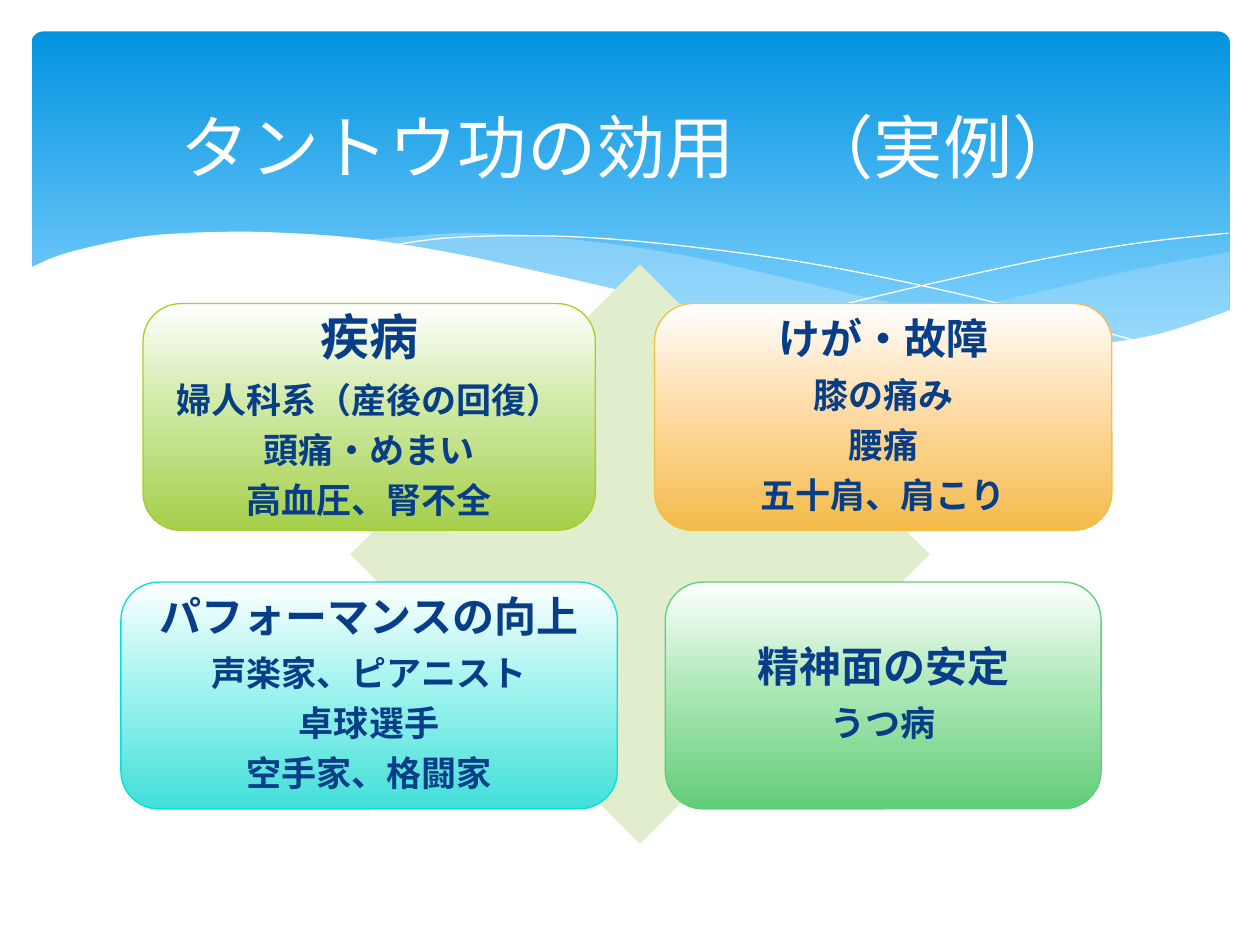
from lxml import etree
from pptx import Presentation
from pptx import util as u
from pptx.dml.color import RGBColor
from pptx.enum import shapes, text
from pptx.oxml.ns import qn

FONT = "Noto Sans CJK JP"
NAVY, WHITE, PALE_BLUE = "073E87", "FFFFFF", "C6E7FC"
COLUMN_CENTRES = (2.93, 7.01)
ROW_TOPS = (2.41, 4.62)
CARD_HEIGHT = 1.8

# column, row, width, middle colour, end colour, line colour, heading size, inset, lines
CARDS = [
    (0, 0, 3.59, "D1EAA7", "A4CF4A", "A5D028", 28, 0.12,
     ["疾病", "婦人科系（産後の回復）", "頭痛・めまい", "高血圧、腎不全"]),
    (1, 0, 3.63, "FFDDAA", "F4BB4A", "F5C040", 24, 0.1,
     ["けが・故障", "膝の痛み", "腰痛", "五十肩、肩こり"]),
    (0, 1, 3.94, "A5F4F0", "42DFD9", "05E0DB", 24, 0.1,
     ["パフォーマンスの向上", "声楽家、ピアニスト", "卓球選手", "空手家、格闘家"]),
    (1, 1, 3.46, "B1E9BB", "61CD78", "5BD078", 24, 0.1,
     ["精神面の安定", "うつ病"]),
]

# Key points of the wave edges, in inches
RIGHT_CREST = [(9.76, 2), (9.06, 2.13), (8.32, 2.3), (7.53, 2.48), (6.61, 2.65)]
RIGHT_TROUGH = [(6.61, 2.65), (7.19, 2.72), (7.81, 2.77), (8.44, 2.77),
                (9.05, 2.69), (9.42, 2.59), (9.76, 2.47)]
MIDDLE_CREST = [(8.93, 2.73), (8.07, 2.6), (7.06, 2.4), (6.29, 2.22), (5.55, 2.05),
                (4.89, 1.94), (4.2, 1.87), (3.61, 1.85), (2.86, 1.91)]
MIDDLE_TROUGH = [(2.86, 1.91), (3.62, 2.03), (4.49, 2.22), (5.3, 2.4), (6.18, 2.58),
                 (6.95, 2.7), (7.61, 2.77), (8.28, 2.78), (8.93, 2.73)]
FALLING_LINE = [(3.09, 1.95), (3.53, 1.89), (4.16, 1.87), (4.89, 1.9), (5.82, 2),
                (6.65, 2.13), (7.6, 2.33), (8.31, 2.51), (9.07, 2.72)]
RISING_LINE = [(6.13, 2.57), (6.72, 2.41), (7.48, 2.23), (8.36, 2.04), (9.1, 1.92),
               (9.75, 1.85)]
WHITE_CREST = [(9.77, 2.46), (9.2, 2.65), (8.63, 2.74), (8.09, 2.77), (7.44, 2.74),
               (6.68, 2.65), (5.79, 2.5), (4.47, 2.2), (3.65, 2.02), (2.92, 1.9),
               (2.3, 1.85), (1.77, 1.84), (1.19, 1.87), (0.76, 1.95), (0.46, 2.03),
               (0.23, 2.13)]


def rgb(value):
    return RGBColor.from_string(value)


def smooth(points, steps=5):
    """Return a Catmull-Rom curve through the points."""
    padded = [points[0], *points, points[-1]]
    curve = [points[0]]
    for a, b, c, d in zip(padded, padded[1:], padded[2:], padded[3:]):
        for t in (step / steps for step in range(1, steps + 1)):
            curve.append(tuple(
                (2 * q + (r - p) * t + (2 * p - 5 * q + 4 * r - s) * t ** 2
                 + (3 * q - p - 3 * r + s) * t ** 3) / 2
                for p, q, r, s in zip(a, b, c, d)))
    return curve


def fill_solid(shape, colour, opacity=100):
    shape.fill.solid()
    shape.fill.fore_color.rgb = rgb(colour)
    if opacity < 100:
        tint = shape._element.spPr.find(".//" + qn("a:srgbClr"))
        etree.SubElement(tint, qn("a:alpha"), val=str(opacity * 1000))


def fill_downwards(shape, stops):
    """Fill with a top-to-bottom gradient of (percent, colour) stops."""
    shape.fill.gradient()
    shape.fill.gradient_angle = 270
    stop_list = shape._element.spPr.find(".//" + qn("a:gsLst"))
    stop_list.clear()
    for percent, colour in stops:
        stop = etree.SubElement(stop_list, qn("a:gs"), pos=str(percent * 1000))
        etree.SubElement(stop, qn("a:srgbClr"), val=colour)


def add_preset(slide, kind, left, top, width, height):
    shape = slide.shapes.add_shape(
        kind, *(u.Inches(n) for n in (left, top, width, height)))
    shape.shadow.inherit = False
    shape.line.fill.background()
    return shape


def add_outline(slide, points, closed):
    start, *rest = [(u.Inches(x), u.Inches(y)) for x, y in points]
    builder = slide.shapes.build_freeform(*start, scale=1.0)
    builder.add_line_segments(rest, close=closed)
    shape = builder.convert_to_shape()
    shape.shadow.inherit = False
    return shape


def add_wave(slide, points, colour, opacity=100):
    wave = add_outline(slide, points, True)
    fill_solid(wave, colour, opacity)
    wave.line.fill.background()


def add_hairline(slide, points):
    hairline = add_outline(slide, smooth(points), False)
    hairline.fill.background()
    hairline.line.color.rgb = rgb(WHITE)
    hairline.line.width = u.Pt(0)


def format_runs(paragraph, size, colour, bold):
    for run in paragraph.runs:
        run.font.name = FONT
        run.font.size = u.Pt(size)
        run.font.bold = bold
        run.font.color.rgb = rgb(colour)
        etree.SubElement(run.font._element, qn("a:ea"), typeface=FONT)


def space_after_share(paragraph, percent):
    paragraph.space_after = u.Pt(0)
    spacing = paragraph._p.pPr.find(qn("a:spcAft"))
    spacing.clear()
    etree.SubElement(spacing, qn("a:spcPct"), val=str(percent * 1000))


def add_card(slide, column, row, width, middle, end, outline, heading_size, inset, lines):
    card = add_preset(slide, shapes.MSO_SHAPE.ROUNDED_RECTANGLE,
                      COLUMN_CENTRES[column] - width / 2, ROW_TOPS[row],
                      width, CARD_HEIGHT)
    fill_downwards(card, [(0, WHITE), (44, middle), (100, end)])
    card.line.color.rgb = rgb(outline)
    card.line.width = u.Pt(0.75)
    frame = card.text_frame
    frame.word_wrap = True
    frame.vertical_anchor = text.MSO_ANCHOR.MIDDLE
    frame.margin_left = frame.margin_right = u.Inches(inset)
    frame.margin_top = frame.margin_bottom = u.Inches(inset)
    frame.text = "\n".join(lines)
    for index, paragraph in enumerate(frame.paragraphs):
        paragraph.alignment = text.PP_ALIGN.CENTER
        paragraph.line_spacing = 0.9
        space_after_share(paragraph, 35)
        format_runs(paragraph, 20 if index else heading_size, NAVY, True)


def add_banner(slide):
    banner = add_preset(slide, shapes.MSO_SHAPE.ROUNDED_RECTANGLE, 0.25, 0.25, 9.51, 2.7)
    banner.adjustments[0] = 0.034
    fill_downwards(banner, [(0, "0293E0"), (90, "83D3FE")])
    add_wave(slide, smooth(RIGHT_CREST) + smooth(RIGHT_TROUGH), PALE_BLUE, 29)
    add_wave(slide, smooth(MIDDLE_CREST) + smooth(MIDDLE_TROUGH), PALE_BLUE, 40)
    add_hairline(slide, FALLING_LINE)
    add_hairline(slide, RISING_LINE)
    add_wave(slide, smooth(WHITE_CREST) + [(0.23, 3.29), (9.77, 3.29)], WHITE)


def set_title(slide, wording):
    title = slide.shapes.title
    title.left, title.top = u.Inches(0.51), u.Inches(0.52)
    title.width, title.height = u.Inches(9), u.Inches(1.53)
    frame = title.text_frame
    frame.text = wording
    frame.auto_size = text.MSO_AUTO_SIZE.NONE
    frame.vertical_anchor = text.MSO_ANCHOR.MIDDLE
    frame.margin_bottom = u.Inches(0.3)
    frame.paragraphs[0].alignment = text.PP_ALIGN.CENTER
    format_runs(frame.paragraphs[0], 39.6, WHITE, False)
    slide.shapes._spTree.append(title._element)  # in front of the banner


def main():
    deck = Presentation()
    deck.slide_width, deck.slide_height = u.Inches(10), u.Inches(7.5)
    slide = deck.slides.add_slide(deck.slide_layouts[5])
    add_banner(slide)
    diamond = add_preset(slide, shapes.MSO_SHAPE.DIAMOND, 2.78, 2.1, 4.6, 4.6)
    fill_solid(diamond, "E1EECD")
    for card in CARDS:
        add_card(slide, *card)
    set_title(slide, "タントウ功の効用　（実例）")
    deck.save("out.pptx")


if __name__ == "__main__":
    main()
